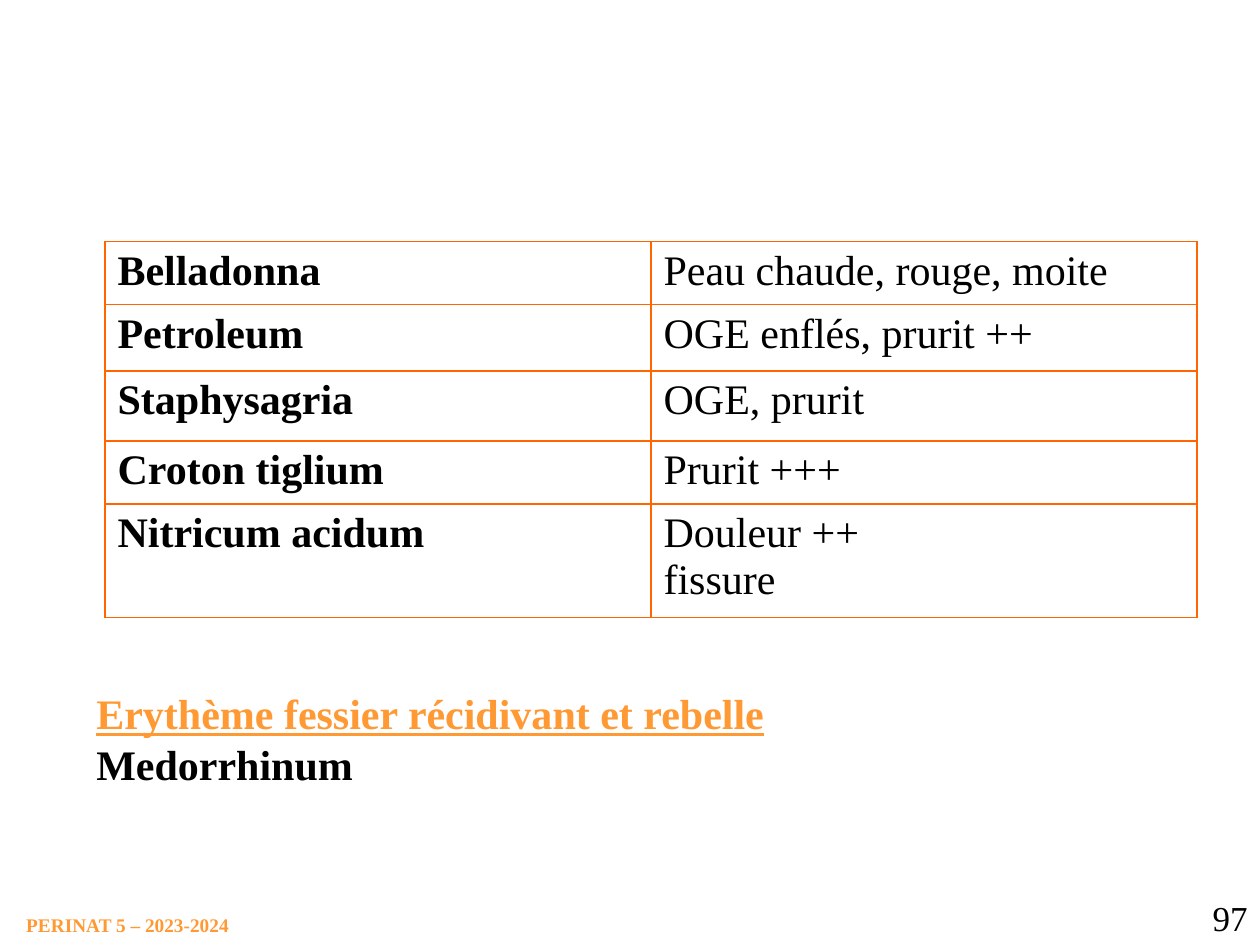
from lxml.etree import SubElement
from pptx import Presentation
from pptx.dml.color import RGBColor
from pptx.enum.text import MSO_AUTO_SIZE as AutoSize, PP_ALIGN as Align
from pptx.oxml.ns import qn
from pptx.util import Pt

FONT = "Times New Roman"
COLORS = {"text": "000000", "accent": "FF9933", "border": "FF6600"}

# Remedy and its signs, one row each, with the row height
REMEDIES = [
    ("Belladonna", "Peau chaude, rouge, moite", 36),
    ("Petroleum", "OGE enflés, prurit ++", 38),
    ("Staphysagria", "OGE, prurit", 40),
    ("Croton tiglium", "Prurit +++", 36),
    ("Nitricum acidum", "Douleur ++\nfissure", 64.8),
]


def style(paragraph, size, color="text", bold=False, underline=False):
    font = paragraph.font
    font.name, font.size = FONT, Pt(size)
    font.bold, font.underline = bold, underline
    font.color.rgb = RGBColor.from_string(COLORS[color])


def add_text(slide, box, text, wrap=True, margins=(7.2, 3.6)):
    frame = slide.shapes.add_textbox(*map(Pt, box)).text_frame
    frame.word_wrap = wrap
    frame.auto_size = AutoSize.SHAPE_TO_FIT_TEXT
    frame.margin_left = frame.margin_right = Pt(margins[0])
    frame.margin_top = frame.margin_bottom = Pt(margins[1])
    frame.text = text
    return frame.paragraphs


def add_borders(cell):
    properties = cell._tc.get_or_add_tcPr()
    for position, side in enumerate(("lnL", "lnR", "lnT", "lnB")):
        line = properties.makeelement(qn(f"a:{side}"), {"w": str(Pt(1))})
        fill = SubElement(line, qn("a:solidFill"))
        SubElement(fill, qn("a:srgbClr"), val=COLORS["border"])
        properties.insert(position, line)


def add_remedy_table(slide, left, top, width):
    height = sum(row[-1] for row in REMEDIES)
    box = map(Pt, (left, top, width, height))
    table = slide.shapes.add_table(len(REMEDIES), 2, *box).table
    table.first_row = table.horz_banding = False
    for row, (*texts, row_height) in enumerate(REMEDIES):
        table.rows[row].height = Pt(row_height)
        for column, text in enumerate(texts):
            cell = table.cell(row, column)
            cell.text = text
            cell.fill.background()
            add_borders(cell)
            for paragraph in cell.text_frame.paragraphs:
                style(paragraph, 24, bold=column == 0)


def main():
    deck = Presentation()
    deck.slide_width, deck.slide_height = Pt(720), Pt(540)
    slide = deck.slides.add_slide(deck.slide_layouts[6])

    # Footer and page number
    footer, = add_text(slide, (15, 522, 118, 13.7), "PERINAT 5 – 2023-2024",
                       wrap=False, margins=(0, 0))
    style(footer, 11, "accent", bold=True)
    page_number, = add_text(slide, (660, 509, 60, 31), "97")
    page_number.alignment = Align.RIGHT
    style(page_number, 20)

    # Recurrent rash and its remedy
    heading, remedy = add_text(
        slide, (48, 389.5, 507, 65),
        "Erythème fessier récidivant et rebelle\nMedorrhinum")
    style(heading, 24, "accent", bold=True, underline=True)
    style(remedy, 24, bold=True)

    # Remedies by signs
    add_remedy_table(slide, 60, 138, 624)

    deck.save("out.pptx")


if __name__ == "__main__":
    main()
